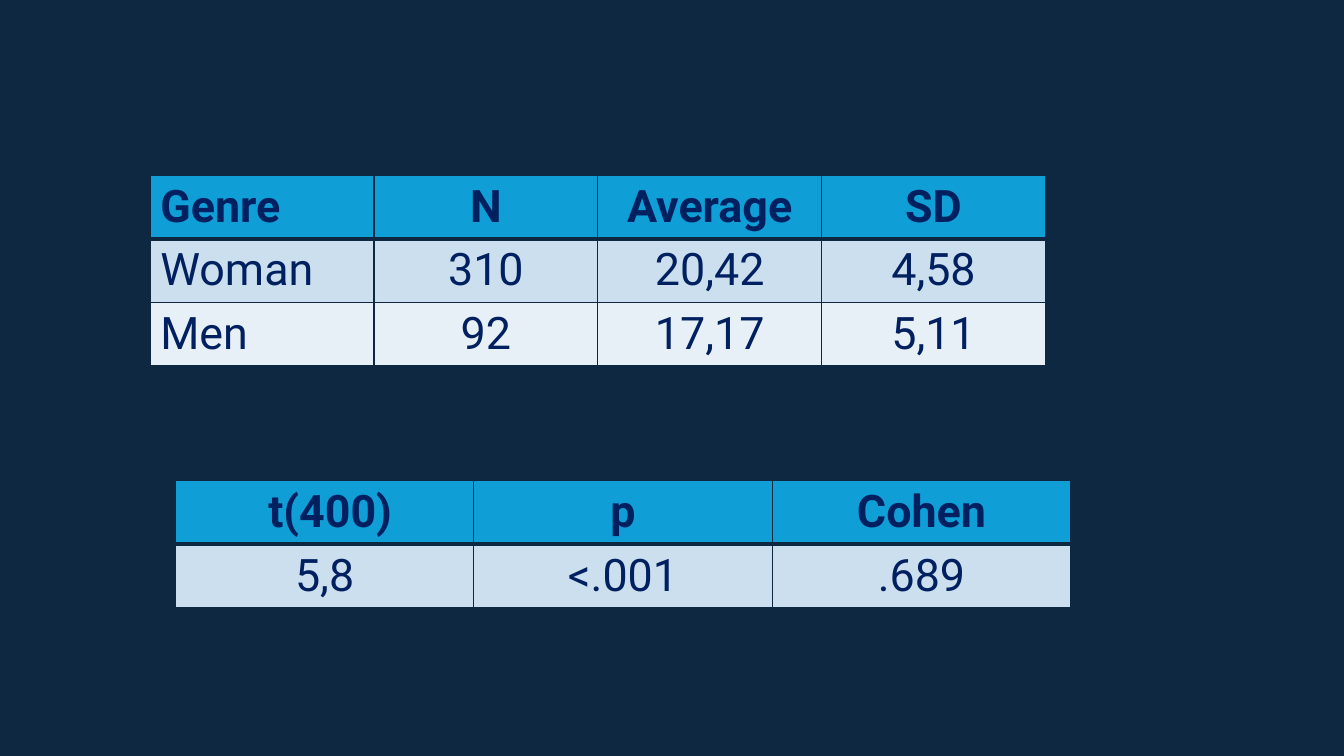
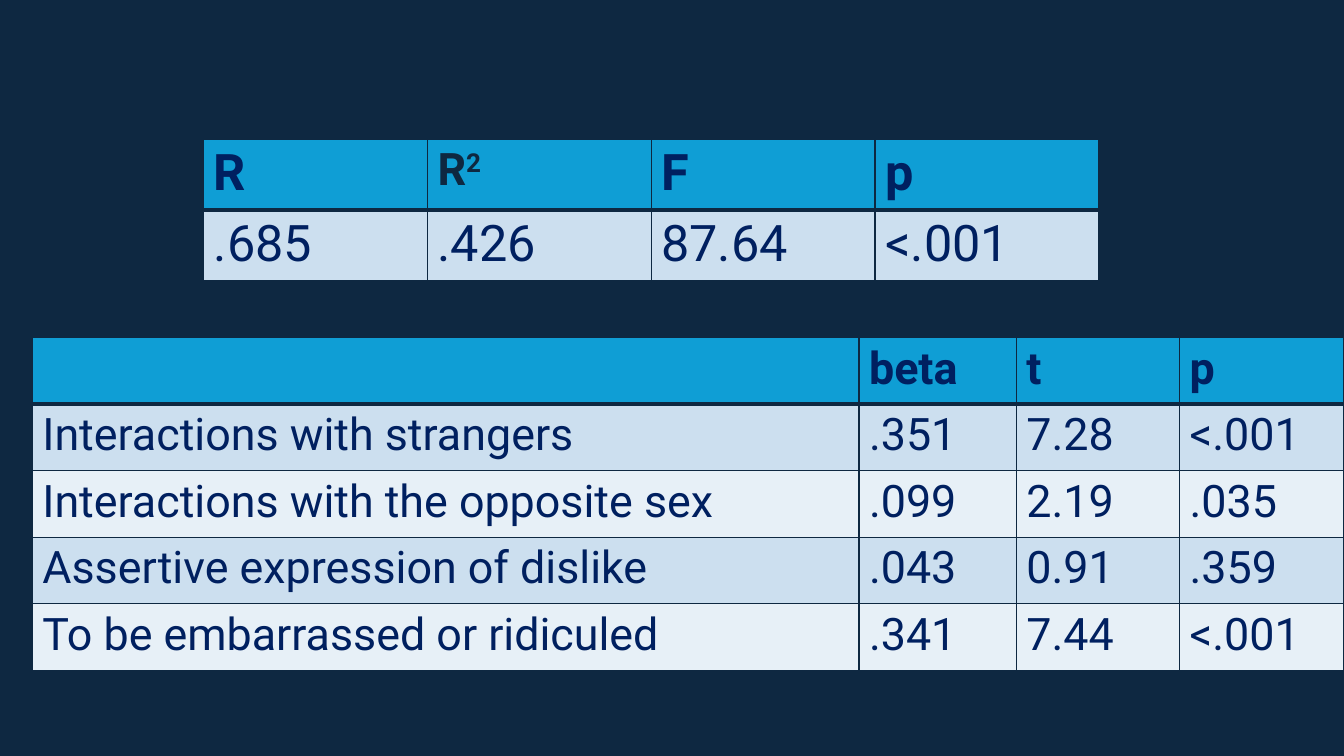
from lxml import etree
from pptx import Presentation
from pptx.dml.color import RGBColor
from pptx.enum.text import PP_ALIGN
from pptx.oxml.ns import qn
from pptx.util import Inches, Pt

LEFT, CENTER = PP_ALIGN.LEFT, PP_ALIGN.CENTER
NIGHT = RGBColor(0x0E, 0x28, 0x41)
NAVY = RGBColor(0x00, 0x20, 0x60)
HEADER = RGBColor(0x0F, 0x9E, 0xD5)
BANDS = (RGBColor(0xCC, 0xDF, 0xEF), RGBColor(0xE7, 0xF0, 0xF7))
FONT = "Roboto"
THIN, THICK = Pt(1), Pt(3)


class Deck:
    def __init__(self):
        self.prs = Presentation()
        self.prs.slide_width = Inches(13.33)
        self.prs.slide_height = Inches(7.5)
        self.s = None

    def slide(self):
        self.s = self.prs.slides.add_slide(self.prs.slide_layouts[6])
        fill = self.s.background.fill
        fill.solid()
        fill.fore_color.rgb = NIGHT

    def run(self, p, text, size, bold, color=NAVY, raised=False):
        r = p.add_run()
        r.text = text
        r.font.name = FONT
        r.font.size = Pt(size)
        r.font.bold = bold
        r.font.color.rgb = color
        if raised:
            r.font._element.set("baseline", "30000")

    def borders(self, cell, top, bottom):
        tc_pr = cell._tc.get_or_add_tcPr()
        for side, width in (("L", THIN), ("R", THIN), ("T", top), ("B", bottom)):
            ln = etree.SubElement(tc_pr, qn(f"a:ln{side}"), w=str(width))
            fill = etree.SubElement(ln, qn("a:solidFill"))
            etree.SubElement(fill, qn("a:srgbClr"), val=str(NIGHT))

    def table(self, left, top, widths, row_height, rows, size=32, aligns=None):
        shape = self.s.shapes.add_table(
            len(rows), len(widths), Inches(left), Inches(top),
            Inches(sum(widths)), Inches(row_height * len(rows)))
        table = shape.table
        for column, width in zip(table.columns, widths):
            column.width = Inches(width)
        aligns = aligns or [LEFT] * len(widths)
        for i, row in enumerate(rows):
            for j, content in enumerate(row):
                cell = table.cell(i, j)
                self.borders(cell, THICK if i == 1 else THIN,
                             THICK if i == 0 else THIN)
                cell.fill.solid()
                cell.fill.fore_color.rgb = BANDS[(i - 1) % 2] if i else HEADER
                p = cell.text_frame.paragraphs[0]
                p.alignment = aligns[j]
                if isinstance(content, tuple):
                    base, power = content
                    self.run(p, base, 32, True, NIGHT)
                    self.run(p, power, 32, True, NIGHT, raised=True)
                elif content:
                    self.run(p, content, size, i == 0)


def main():
    deck = Deck()

    deck.slide()
    deck.table(1.49, 1.74, [2.22] * 4, 0.63, [
        ["Genre", "N", "Average", "SD"],
        ["Woman", "310", "20,42", "4,58"],
        ["Men", "92", "17,17", "5,11"],
    ], aligns=[LEFT] + [CENTER] * 3)
    deck.table(1.74, 4.77, [2.96] * 3, 0.63, [
        [" t(400)", "p", "Cohen"],
        ["5,8", "<.001", ".689"],
    ], aligns=[CENTER] * 3)

    deck.slide()
    deck.table(2.02, 1.38, [2.22] * 4, 0.7, [
        ["R", ("R", "2"), "F", "p"],
        [".685", ".426", "87.64", "<.001"],
    ], size=36)
    deck.table(0.32, 3.35, [8.2, 1.56, 1.62, 1.63], 0.66, [
        ["", "beta", "t", "p"],
        ["Interactions with strangers", ".351", "7.28", "<.001"],
        ["Interactions with the opposite sex", ".099", "2.19", ".035"],
        ["Assertive expression of dislike", ".043", "0.91", ".359"],
        ["To be embarrassed or ridiculed", ".341", "7.44", "<.001"],
    ])

    deck.prs.save("out.pptx")


if __name__ == "__main__":
    main()
